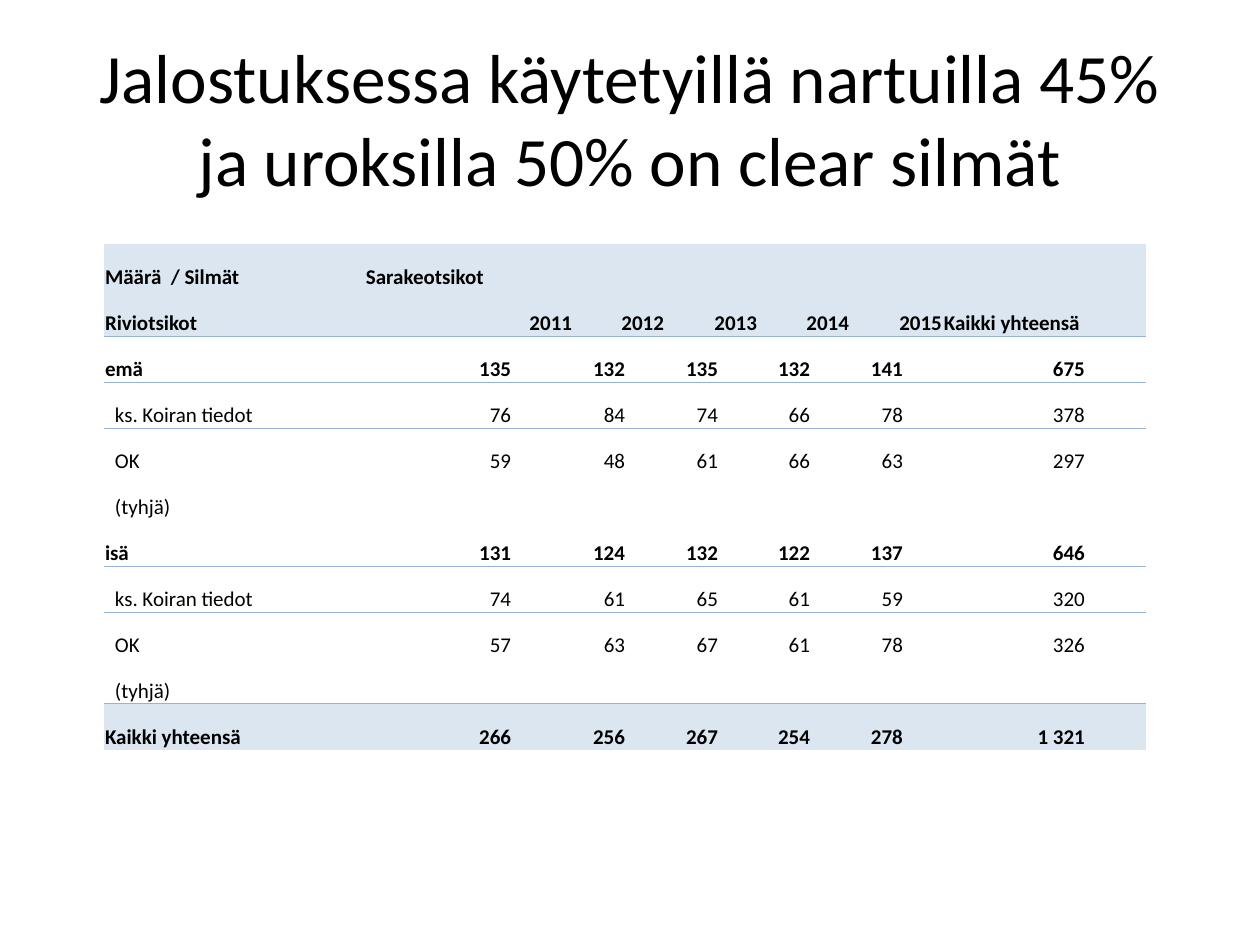
from dataclasses import dataclass

from lxml.etree import SubElement
from pptx import Presentation
from pptx.dml.color import RGBColor
from pptx.enum.text import MSO_ANCHOR, MSO_AUTO_SIZE, PP_ALIGN
from pptx.oxml.ns import qn
from pptx.util import Inches, Pt

SCALE = Inches(1) / 126
PLAIN = "{2D5ABB26-0587-4C30-8999-92F81FD0307C}"  # no style, no grid


def px(count):
    return round(count * SCALE)


@dataclass(frozen=True)
class Theme:
    font: str = "Calibri"
    ink: str = "000000"
    band: str = "DCE6F1"
    rule: str = "95B3D7"
    title: float = 39.6
    body: float = 12
    line: float = 0.5


@dataclass
class Row:
    cells: list
    bold: bool = False
    band: bool = False
    under: bool = False
    head: bool = False


class Page:
    """Holds the theme and the current slide."""

    def __init__(self, slide, theme):
        self.slide = slide
        self.theme = theme

    def text(self, frame, words, size, align, bold=False):
        para = frame.paragraphs[0]
        para.alignment = align
        run = para.add_run()
        run.text = words
        font = run.font
        font.name, font.size, font.bold = self.theme.font, Pt(size), bold
        font.color.rgb = RGBColor.from_string(self.theme.ink)

    def title(self, words, box):
        shape = self.slide.shapes.title
        shape.left, shape.top, shape.width, shape.height = map(px, box)
        frame = shape.text_frame
        frame.word_wrap = True
        frame.auto_size = MSO_AUTO_SIZE.NONE
        frame.vertical_anchor = MSO_ANCHOR.MIDDLE
        self.text(frame, words, self.theme.title, PP_ALIGN.CENTER)

    def edge(self, cell, side):
        props = cell._tc.get_or_add_tcPr()
        line = SubElement(props, qn(f"a:ln{side}"), w=str(Pt(self.theme.line)))
        fill = SubElement(line, qn("a:solidFill"))
        SubElement(fill, qn("a:srgbClr"), val=self.theme.rule)

    def cell(self, cell, row, words, col, pad):
        label = col == 0 or not words[:1].isdigit()
        indent = col == 0 and not row.bold
        cell.vertical_anchor = MSO_ANCHOR.BOTTOM
        cell.margin_left = px(11 if indent else 1)
        cell.margin_right = px(1 if label or row.head else pad)
        cell.margin_top, cell.margin_bottom = px(1), 0
        if row.band:
            cell.fill.solid()
            cell.fill.fore_color.rgb = RGBColor.from_string(self.theme.band)
        else:
            cell.fill.background()
        if words:
            align = PP_ALIGN.LEFT if label else PP_ALIGN.RIGHT
            self.text(cell.text_frame, words, self.theme.body, align, row.bold)

    def table(self, rows, left, top, widths, high, pads):
        """Add a table; pads are the gaps to the right of the figures."""
        box = map(px, (left, top, sum(widths), high * len(rows)))
        table = self.slide.shapes.add_table(len(rows), len(widths), *box).table
        table.first_row = table.horz_banding = False
        table._tbl.tblPr.find(qn("a:tableStyleId")).text = PLAIN
        for col, width in zip(table.columns, widths):
            col.width = px(width)
        over = False
        for line, row in zip(table.rows, rows):
            line.height = px(high)
            texts = row.cells + [""] * (len(widths) - len(row.cells))
            for col, (cell, words) in enumerate(zip(line.cells, texts)):
                if over:
                    self.edge(cell, "T")
                if row.under:
                    self.edge(cell, "B")
                self.cell(cell, row, words, col, pads[col])
            over = row.under


def group(name, total, seen, clear, last=False):
    """Rows of one parent: its total, then the split by eye result."""
    return [
        Row([name] + total.split(), bold=True, under=True),
        Row(["ks. Koiran tiedot"] + seen.split()),
        Row(["OK"] + clear.split()),
        Row(["(tyhjä)"], under=last),
    ]


def main():
    deck = Presentation()
    deck.slide_width, deck.slide_height = Inches(10), Inches(7.5)
    page = Page(deck.slides.add_slide(deck.slide_layouts[5]), Theme())
    page.title(
        "Jalostuksessa käytetyillä nartuilla 45% ja uroksilla 50% on clear silmät",
        (63, 38, 1134, 158),
    )
    years = [str(year) for year in range(2011, 2016)]
    rows = [
        Row(["Määrä  / Silmät", "Sarakeotsikot"], bold=True, band=True),
        Row(["Riviotsikot", *years, "Kaikki yhteensä"],
            bold=True, band=True, under=True, head=True),
        *group("emä", "135 132 135 132 141 675",
               "76 84 74 66 78 378", "59 48 61 66 63 297"),
        *group("isä", "131 124 132 122 137 646",
               "74 61 65 61 59 320", "57 63 67 61 78 326", last=True),
        Row(["Kaikki yhteensä", "266", "256", "267", "254", "278", "1 321"],
            bold=True, band=True),
    ]
    widths = [261, 208, 92, 93, 92, 93, 203]
    page.table(rows, 104, 244, widths, 46, [1, 62, 40, 40, 40, 40, 61])
    deck.save("out.pptx")


if __name__ == "__main__":
    main()
